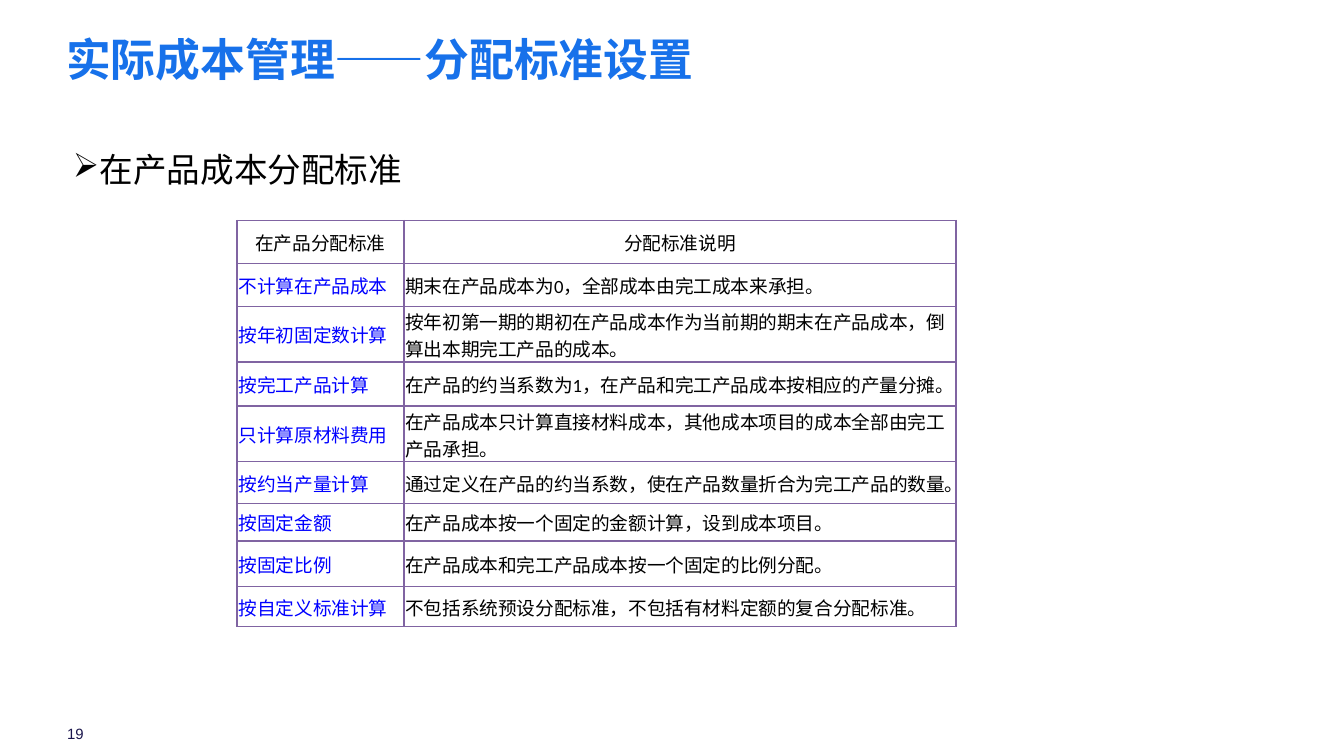
from dataclasses import dataclass

from lxml.etree import SubElement
from pptx import Presentation
from pptx.dml.color import RGBColor
from pptx.enum.text import MSO_ANCHOR, MSO_AUTO_SIZE, PP_ALIGN
from pptx.oxml.ns import qn
from pptx.util import Cm, Pt


@dataclass(frozen=True)
class Theme:
    title_color: str = "1771EA"
    text_color: str = "000000"
    method_color: str = "0000FF"
    border_color: str = "8064A2"
    number_color: str = "1A154C"
    chinese_font: str = "Noto Sans CJK SC"
    table_font: str = "Calibri"
    number_font: str = "Arial"
    title_size: int = 24
    bullet_size: int = 18
    table_size: int = 10
    number_size: int = 8
    border_width: int = 1


HEADER = ("在产品分配标准", "分配标准说明")
ALLOCATION_RULES = [
    ("不计算在产品成本", "期末在产品成本为0，全部成本由完工成本来承担。"),
    ("按年初固定数计算", "按年初第一期的期初在产品成本作为当前期的期末在产品成本，倒算出本期完工产品的成本。"),
    ("按完工产品计算", "在产品的约当系数为1，在产品和完工产品成本按相应的产量分摊。"),
    ("只计算原材料费用", "在产品成本只计算直接材料成本，其他成本项目的成本全部由完工产品承担。"),
    ("按约当产量计算", "通过定义在产品的约当系数，使在产品数量折合为完工产品的数量。"),
    ("按固定金额", "在产品成本按一个固定的金额计算，设到成本项目。"),
    ("按固定比例", "在产品成本和完工产品成本按一个固定的比例分配。"),
    ("按自定义标准计算", "不包括系统预设分配标准，不包括有材料定额的复合分配标准。"),
]
COLUMN_WIDTHS = [3.15, 10.44]
ROW_HEIGHTS = [0.81, 0.81, 0.99, 0.84, 0.89, 0.79, 0.71, 0.86, 0.76]


def write_text(text_frame, text, *, font, size, color, bold=False,
               align=PP_ALIGN.LEFT, bullet=None, indent=0):
    paragraph = text_frame.paragraphs[0]
    paragraph.alignment = align
    if bullet:
        properties = paragraph._p.get_or_add_pPr()
        properties.set("marL", str(Cm(indent)))
        properties.set("indent", str(-Cm(indent)))
        SubElement(properties, qn("a:buChar"), char=bullet)
    run = paragraph.add_run()
    run.text = text
    run.font.name = font
    run.font.size = Pt(size)
    run.font.bold = bold
    run.font.color.rgb = RGBColor.from_string(color)
    SubElement(run._r.get_or_add_rPr(), qn("a:ea"), typeface=Theme.chinese_font)


class SlideBuilder:
    def __init__(self, slide, theme):
        self.slide = slide
        self.theme = theme

    def prepare_frame(self, shape, anchor):
        frame = shape.text_frame
        frame.margin_left = frame.margin_right = 0
        frame.margin_top = frame.margin_bottom = 0
        frame.word_wrap = True
        frame.auto_size = MSO_AUTO_SIZE.NONE
        frame.vertical_anchor = anchor
        return frame

    def add_title(self, text, left, top, width, height):
        title = self.slide.shapes.title
        title.left, title.top = Cm(left), Cm(top)
        title.width, title.height = Cm(width), Cm(height)
        write_text(self.prepare_frame(title, MSO_ANCHOR.TOP), text,
                   font=self.theme.chinese_font, size=self.theme.title_size,
                   color=self.theme.title_color, bold=True)

    def add_text(self, text, left, top, width, height, anchor=MSO_ANCHOR.TOP, **text_format):
        shape = self.slide.shapes.add_textbox(Cm(left), Cm(top), Cm(width), Cm(height))
        write_text(self.prepare_frame(shape, anchor), text, **text_format)

    def add_borders(self, cell):
        properties = cell._tc.get_or_add_tcPr()
        for side in ("lnL", "lnR", "lnT", "lnB"):
            line = SubElement(properties, qn(f"a:{side}"), w=str(Pt(self.theme.border_width)))
            fill = SubElement(line, qn("a:solidFill"))
            SubElement(fill, qn("a:srgbClr"), val=self.theme.border_color)

    def fill_cell(self, cell, text, color, align):
        cell.margin_left = cell.margin_right = cell.margin_top = Cm(0.03)
        cell.margin_bottom = 0
        cell.vertical_anchor = MSO_ANCHOR.MIDDLE
        self.add_borders(cell)
        cell.fill.background()
        write_text(cell.text_frame, text, font=self.theme.table_font,
                   size=self.theme.table_size, color=color, align=align)

    def add_table(self, rows, left, top, column_widths, row_heights):
        table = self.slide.shapes.add_table(
            len(rows), len(column_widths), Cm(left), Cm(top),
            Cm(sum(column_widths)), Cm(sum(row_heights))).table
        table.first_row = table.horz_banding = False
        for column, width in zip(table.columns, column_widths):
            column.width = Cm(width)
        for row, height in zip(table.rows, row_heights):
            row.height = Cm(height)
        for row_index, texts in enumerate(rows):
            is_header = row_index == 0
            align = PP_ALIGN.CENTER if is_header else PP_ALIGN.LEFT
            for column_index, text in enumerate(texts):
                is_method = column_index == 0 and not is_header
                color = self.theme.method_color if is_method else self.theme.text_color
                self.fill_cell(table.cell(row_index, column_index), text, color, align)


def main():
    theme = Theme()
    presentation = Presentation()
    presentation.slide_width, presentation.slide_height = Cm(25.4), Cm(14.29)
    title_only = presentation.slide_layouts[5]
    builder = SlideBuilder(presentation.slides.add_slide(title_only), theme)

    builder.add_title("实际成本管理——分配标准设置", 1.25, 0.6, 23.35, 1.45)
    builder.add_text("在产品成本分配标准", 1.38, 2.82, 6.93, 0.84,
                     font=theme.chinese_font, size=theme.bullet_size,
                     color=theme.text_color, bullet="➢", indent=0.48)
    builder.add_table([HEADER, *ALLOCATION_RULES], 4.48, 4.17, COLUMN_WIDTHS, ROW_HEIGHTS)
    builder.add_text("19", 1.27, 13.7, 0.64, 0.33, anchor=MSO_ANCHOR.MIDDLE,
                     font=theme.number_font, size=theme.number_size,
                     color=theme.number_color)
    presentation.save("out.pptx")


if __name__ == "__main__":
    main()
